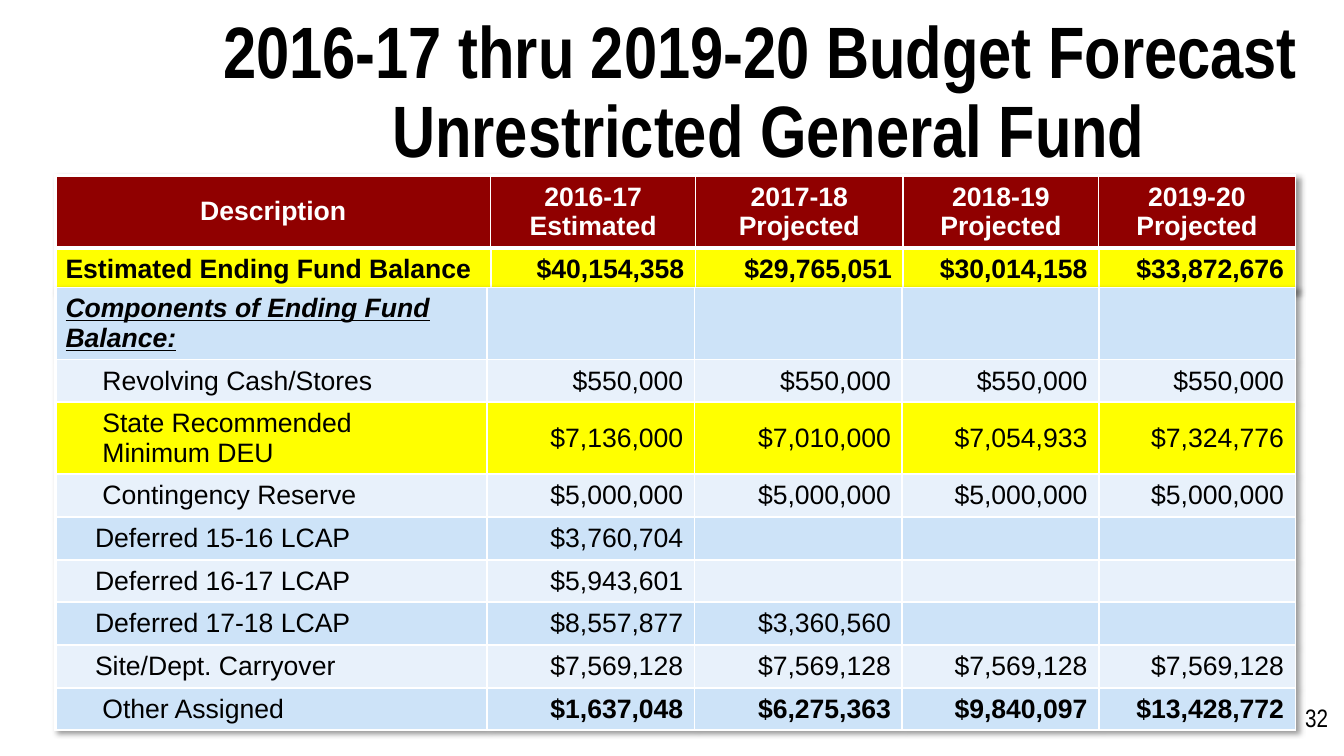
from dataclasses import dataclass

from lxml import etree
from pptx import Presentation
from pptx.dml.color import RGBColor
from pptx.enum.text import MSO_ANCHOR, MSO_AUTO_SIZE, PP_ALIGN
from pptx.oxml import parse_xml
from pptx.oxml.ns import nsdecls, qn
from pptx.util import Pt

LEFT, CENTER, RIGHT = PP_ALIGN.LEFT, PP_ALIGN.CENTER, PP_ALIGN.RIGHT
MIDDLE = MSO_ANCHOR.MIDDLE
NONE = MSO_AUTO_SIZE.NONE


@dataclass(frozen=True)
class Theme:
    black: str = "000000"
    white: str = "FFFFFF"
    red: str = "900000"
    yellow: str = "FFFF00"
    blue: str = "CDE3F8"
    pale: str = "E8F1FB"
    sans: str = "Arial"
    narrow: str = "Arial Narrow"
    title: float = 52
    body: float = 19
    page: float = 18
    thin: float = 1
    rule: float = 1.5
    thick: float = 3


THEME = Theme()

HEADS = ["Description", "2016-17\nEstimated", "2017-18\nProjected",
         "2018-19\nProjected", "2019-20\nProjected"]
TOTAL = ["Estimated Ending Fund Balance", "$40,154,358", "$29,765,051",
         "$30,014,158", "$33,872,676"]
PARTS = [
    (0, ["Components of Ending Fund Balance:"]),
    (26.4, ["Revolving Cash/Stores"] + ["$550,000"] * 4),
    (26.4, ["State Recommended\vMinimum DEU", "$7,136,000", "$7,010,000",
            "$7,054,933", "$7,324,776"]),
    (26.4, ["Contingency Reserve"] + ["$5,000,000"] * 4),
    (21.1, ["Deferred 15-16 LCAP", "$3,760,704"]),
    (21.1, ["Deferred 16-17 LCAP", "$5,943,601"]),
    (21.1, ["Deferred 17-18 LCAP", "$8,557,877", "$3,360,560"]),
    (21.1, ["Site/Dept. Carryover"] + ["$7,569,128"] * 4),
    (26.4, ["Other Assigned", "$1,637,048", "$6,275,363", "$9,840,097",
            "$13,428,772"]),
]


def put(item, **vals):
    for name, val in vals.items():
        setattr(item, name, val)


def style(text, face, size, color, align, indent=0, **marks):
    for para in text.paragraphs:
        para.alignment = align
        if indent:
            para._p.get_or_add_pPr().set("marL", str(Pt(indent)))
        for run in para.runs:
            put(run.font, name=face, size=Pt(size), **marks)
            run.font.color.rgb = RGBColor.from_string(color)


def edge(cell, sides):
    props = cell._tc.get_or_add_tcPr()
    for spot, (side, width) in enumerate(sides.items()):
        props.insert(spot, parse_xml(
            f'<a:ln{side} {nsdecls("a")} w="{Pt(width)}"><a:solidFill>'
            f'<a:srgbClr val="{THEME.white}"/></a:solidFill></a:ln{side}>'))


def shade(table):
    props = table._tbl.tblPr
    effect = etree.Element(qn("a:effectLst"))
    effect.append(parse_xml(
        f'<a:outerShdw {nsdecls("a")} blurRad="{Pt(4)}" dist="{Pt(3)}" '
        f'dir="2700000" algn="tl" rotWithShape="0"><a:srgbClr val="{THEME.black}">'
        '<a:alpha val="40000"/></a:srgbClr></a:outerShdw>'))
    props.insert(0, effect)


def grid(slide, box, widths, heights):
    table = slide.shapes.add_table(
        len(heights), len(widths), *map(Pt, box)).table
    put(table, first_row=False, horz_banding=False)
    for col, width in zip(table.columns, widths):
        col.width = Pt(width)
    for row, height in zip(table.rows, heights):
        row.height = Pt(height)
    shade(table)
    return table


def fill_cell(cell, text, fill, color, align, sides, indent=0, **marks):
    wide, high = (8, 4) if align == RIGHT else (7.2, 3.6)
    put(cell, margin_left=Pt(wide), margin_right=Pt(wide),
        margin_top=Pt(high), margin_bottom=Pt(high), vertical_anchor=MIDDLE)
    cell.fill.solid()
    cell.fill.fore_color.rgb = RGBColor.from_string(fill)
    edge(cell, sides)
    if text:
        cell.text_frame.text = text
        style(cell.text_frame, THEME.sans, THEME.body, color, align,
              indent, **marks)


def sides_of(col, top, base, line):
    return {"L": THEME.thick if col == 0 else line,
            "R": THEME.thin if col == 4 else line,
            "T": top, "B": base}


def total_table(slide, box):
    table = grid(slide, box, [311, 146.2, 148.3, 139.7, 140.4], [51.8, 30.2])
    for col, (head, sum_) in enumerate(zip(HEADS, TOTAL)):
        fill_cell(table.cell(0, col), head, THEME.red, THEME.white, CENTER,
                  sides_of(col, THEME.thick, THEME.thick, THEME.thin),
                  bold=True)
        fill_cell(table.cell(1, col), sum_, THEME.yellow, THEME.black,
                  RIGHT if col else LEFT,
                  sides_of(col, THEME.thick, THEME.thin, THEME.rule),
                  bold=True)


def parts_table(slide, box):
    heights = [51.6 if row in (0, 2) else 30.5 for row in range(len(PARTS))]
    table = grid(slide, box, [308.2, 148.3, 148.3, 140.4, 140.4], heights)
    last = len(PARTS) - 1
    for row, (indent, texts) in enumerate(PARTS):
        fill = THEME.pale if row % 2 else THEME.blue
        if row == 2:
            fill = THEME.yellow
        top = THEME.rule if row else THEME.thin
        head = row == 0
        for col in range(5):
            text = texts[col] if col < len(texts) else ""
            fill_cell(table.cell(row, col), text, fill, THEME.black,
                      RIGHT if col else LEFT,
                      sides_of(col, top, THEME.rule, THEME.rule),
                      0 if col else indent,
                      bold=head or (row == last and col > 0),
                      italic=head, underline=head)


def place_title(slide, box):
    title = slide.shapes.title
    left, top, width, height = map(Pt, box)
    put(title, left=left, top=top, width=width, height=height)
    frame = title.text_frame
    put(frame, text="2016-17 thru 2019-20 Budget Forecast \vUnrestricted General Fund",
        vertical_anchor=MIDDLE, word_wrap=True, auto_size=NONE)
    frame.paragraphs[0].line_spacing = 0.9
    style(frame, THEME.narrow, THEME.title, THEME.black, CENTER, bold=True)


def place_page(slide, box):
    frame = slide.shapes.add_textbox(*map(Pt, box)).text_frame
    put(frame, text="32", word_wrap=True)
    style(frame, THEME.narrow, THEME.page, THEME.black, LEFT)


def main():
    deck = Presentation()
    put(deck, slide_width=Pt(960), slide_height=Pt(540))
    slide = deck.slides.add_slide(deck.slide_layouts[5])
    place_title(slide, (144.7, 15.1, 808.6, 104.4))
    total_table(slide, (39.6, 125.3, 885.6, 82))
    parts_table(slide, (39.6, 205.2, 885.6, 316.7))
    place_page(slide, (925.2, 498.2, 36, 28.8))
    deck.save("out.pptx")


if __name__ == "__main__":
    main()
